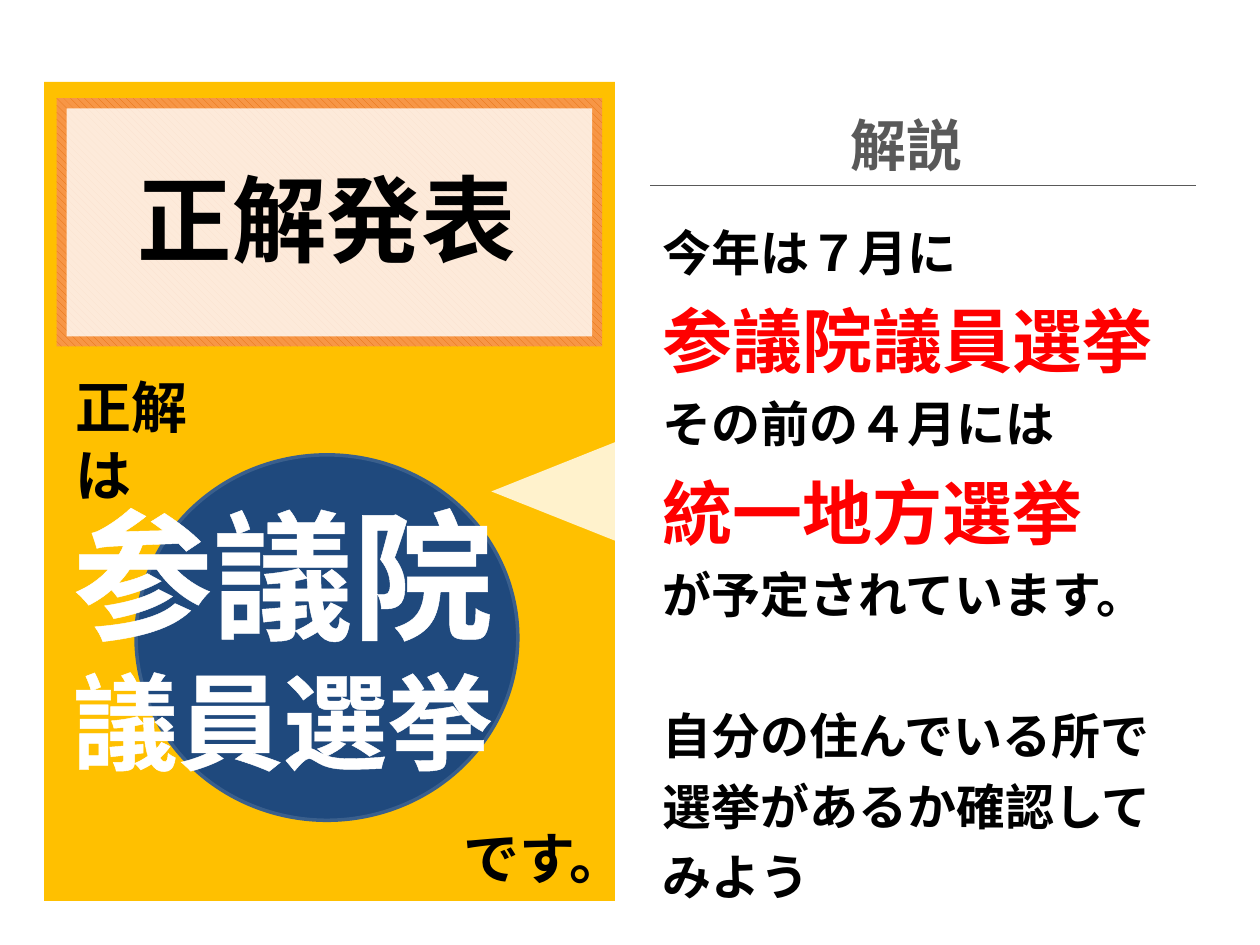
"""Build the quiz answer slide about the upcoming elections."""
from lxml import etree
from pptx import Presentation
from pptx.dml.color import RGBColor
from pptx.enum.dml import MSO_PATTERN
from pptx.enum.shapes import MSO_CONNECTOR, MSO_SHAPE
from pptx.enum.text import MSO_ANCHOR, MSO_AUTO_SIZE, PP_ALIGN
from pptx.oxml.ns import qn
from pptx.util import Inches, Pt

RECT, ROUND = MSO_SHAPE.RECTANGLE, MSO_SHAPE.ROUNDED_RECTANGLE
CONE, OVAL = MSO_SHAPE.ISOSCELES_TRIANGLE, MSO_SHAPE.OVAL
HATCH = MSO_PATTERN.WIDE_DOWNWARD_DIAGONAL
LEFT, MID, FULL = PP_ALIGN.LEFT, PP_ALIGN.CENTER, PP_ALIGN.JUSTIFY
FONT = "Noto Sans CJK JP"
BLACK, WHITE, RED, GREY = "000000", "FFFFFF", "FF0000", "595959"
WIDE, HIGH = Inches(10), Inches(7.5)

# Boxes are left, top, width and height in percent of the slide.
SHAPES = [
    (RECT, (1.8, 2.53, 96.5, 95.07), dict(fill=WHITE, alpha=20, line=WHITE, thick=0.5)),
    (RECT, (3.5, 8.67, 45.3, 86.67), dict(fill="FFC000")),
    (RECT, (4.5, 10.4, 43.3, 26.27), dict(fill="E46C0A", back="F79646")),
    (RECT, (5.3, 11.47, 41.7, 24.13), dict(fill=WHITE, alpha=80)),
    (ROUND, (50.6, 8.67, 45.9, 86.67), dict(fill=WHITE, alpha=80, round=0.06)),
    (CONE, (40.3, 43.47, 10.2, 17.07), dict(fill=WHITE, alpha=80, turn=270)),
    (OVAL, (10.8, 48.13, 30.3, 38.67), dict(fill="1F497D", line="3A5F8C", thick=2)),
]
TITLE = ("正解発表", (9.8, 16.4, 32.3, 13.47))
LABELS = [
    ("正解は", (5, 38.8, 15, 8.53), BLACK, True),
    ("です。", (35.8, 86.53, 12.8, 8.53), BLACK, False),
    ("解説", (66.5, 11.07, 11, 8.53), GREY, False),
]
RULE = (51.6, 19.6, 43.3, 0)
NOTES = [
    ("今年は７月に", 28, BLACK, 0),
    ("参議院議員選挙", 40, RED, 0),
    ("その前の４月には", 28, BLACK, 0),
    ("統一地方選挙", 40, RED, 0),
    ("が予定されています。", 28, BLACK, 0),
    ("自分の住んでいる所で選挙があるか確認してみよう", 28, BLACK, 40),
]
NOTE_BOX = (51.6, 21.6, 43.3, 68.13)
ANSWER = [("参議院", 80), ("議員選挙", 60)]
ANSWER_BOX = (4.8, 51.07, 42.1, 32.8)


def tint(code):
    return RGBColor.from_string(code)


def place(box):
    x, y, w, h = box
    return [int(v) for v in (WIDE * x / 100, HIGH * y / 100, WIDE * w / 100, HIGH * h / 100)]


def draw(slide, kind, box, fill, alpha=100, back=None, line=None, thick=1, round=None, turn=0):
    shape = slide.shapes.add_shape(kind, *place(box))
    shape.shadow.inherit = False
    shape.rotation = turn
    if round:
        shape.adjustments[0] = round
    if back:
        shape.fill.patterned()
        shape.fill.pattern = HATCH
        shape.fill.fore_color.rgb = tint(fill)
        shape.fill.back_color.rgb = tint(back)
    else:
        shape.fill.solid()
        shape.fill.fore_color.rgb = tint(fill)
    if alpha < 100:
        clr = shape.fill._xPr.find(".//" + qn("a:srgbClr"))
        etree.SubElement(clr, qn("a:alpha"), val=str(alpha * 1000))
    if line:
        shape.line.color.rgb = tint(line)
        shape.line.width = Pt(thick)
    else:
        shape.line.fill.background()


def frame(shape, box, wrap=False):
    """Move a text holder to its box, in front of all else."""
    shape.left, shape.top, shape.width, shape.height = place(box)
    tree = shape.element.getparent()
    tree.append(shape.element)
    text = shape.text_frame
    text.word_wrap = wrap
    text.auto_size = MSO_AUTO_SIZE.SHAPE_TO_FIT_TEXT
    text.vertical_anchor = MSO_ANCHOR.TOP
    return text


def write(frame, text, size=32, color=BLACK, align=LEFT, space=None, gap=0, edge=None):
    """Add one formatted paragraph to a text frame."""
    para = frame.paragraphs[0]
    if para.runs:
        para = frame.add_paragraph()
    para.alignment = align
    para.space_before = Pt(gap)
    if space:
        para.line_spacing = space
    props = para._p.get_or_add_pPr()
    props.set("marL", "0")
    props.set("indent", "0")
    etree.SubElement(props, qn("a:buNone"))
    run = para.add_run()
    run.text = text
    font = run.font
    font.size, font.bold, font.name = Pt(size), True, FONT
    font.color.rgb = tint(color)
    mark = run._r.get_or_add_rPr()
    etree.SubElement(mark, qn("a:ea"), typeface=FONT)
    if edge:
        line = etree.Element(qn("a:ln"), w=str(Pt(edge)))
        fill = etree.SubElement(line, qn("a:solidFill"))
        etree.SubElement(fill, qn("a:srgbClr"), val=color)
        mark.insert(0, line)


def main():
    deck = Presentation()
    deck.slide_width, deck.slide_height = WIDE, HIGH
    slide = deck.slides.add_slide(deck.slide_layouts[1])
    for kind, box, look in SHAPES:
        draw(slide, kind, box, **look)

    text, box = TITLE
    write(frame(slide.shapes.title, box), text, size=54, align=MID)
    for text, box, color, wrap in LABELS:
        label = slide.shapes.add_textbox(*place(box))
        write(frame(label, box, wrap), text, color=color)

    x, y, w, h = place(RULE)
    rule = slide.shapes.add_connector(MSO_CONNECTOR.STRAIGHT, x, y, x + w, y + h)
    rule.line.color.rgb = tint(GREY)
    rule.line.width = Pt(0.75)
    etree.SubElement(rule.element.spPr, qn("a:effectLst"))

    notes = frame(slide.placeholders[1], NOTE_BOX, True)
    for text, size, color, gap in NOTES:
        write(notes, text, size=size, color=color, space=1.2, gap=gap)

    answer = frame(slide.shapes.add_textbox(*place(ANSWER_BOX)), ANSWER_BOX, True)
    for text, size in ANSWER:
        write(answer, text, size=size, color=WHITE, align=FULL, edge=1.5)
    deck.save("out.pptx")


if __name__ == "__main__":
    main()
